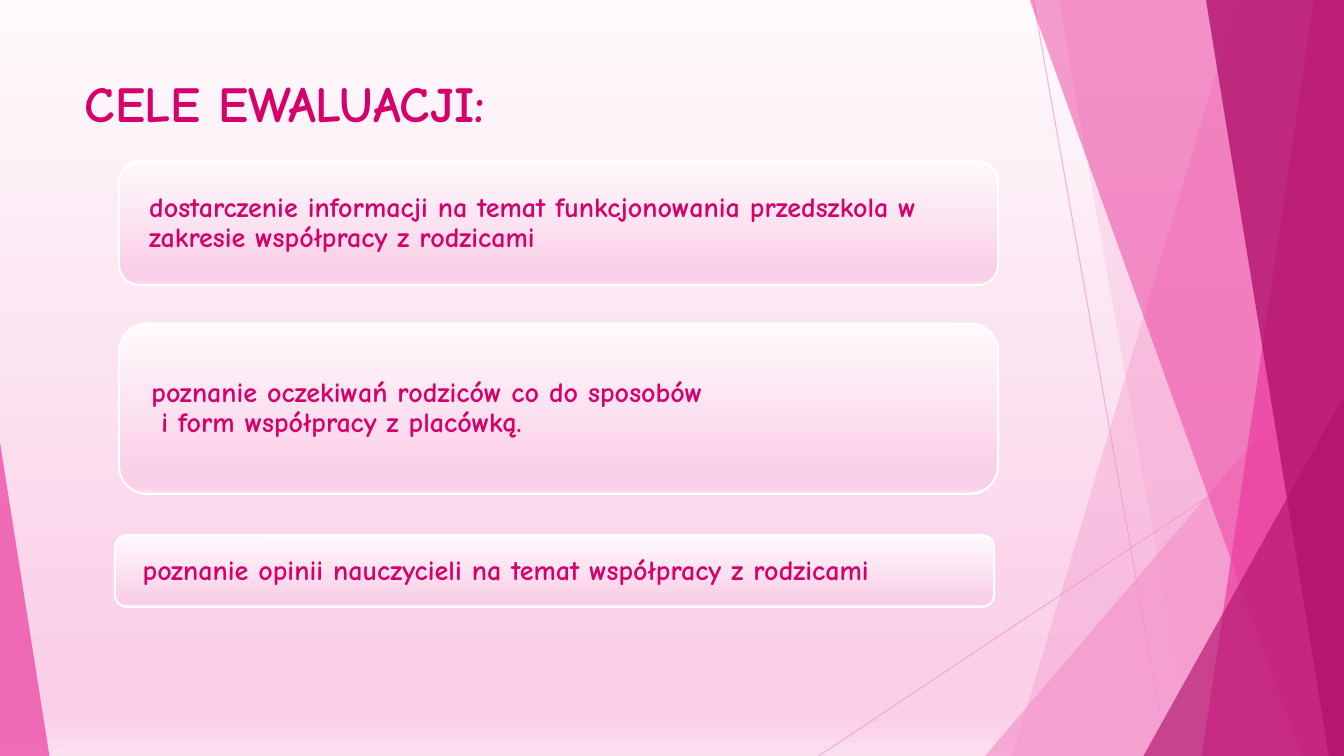
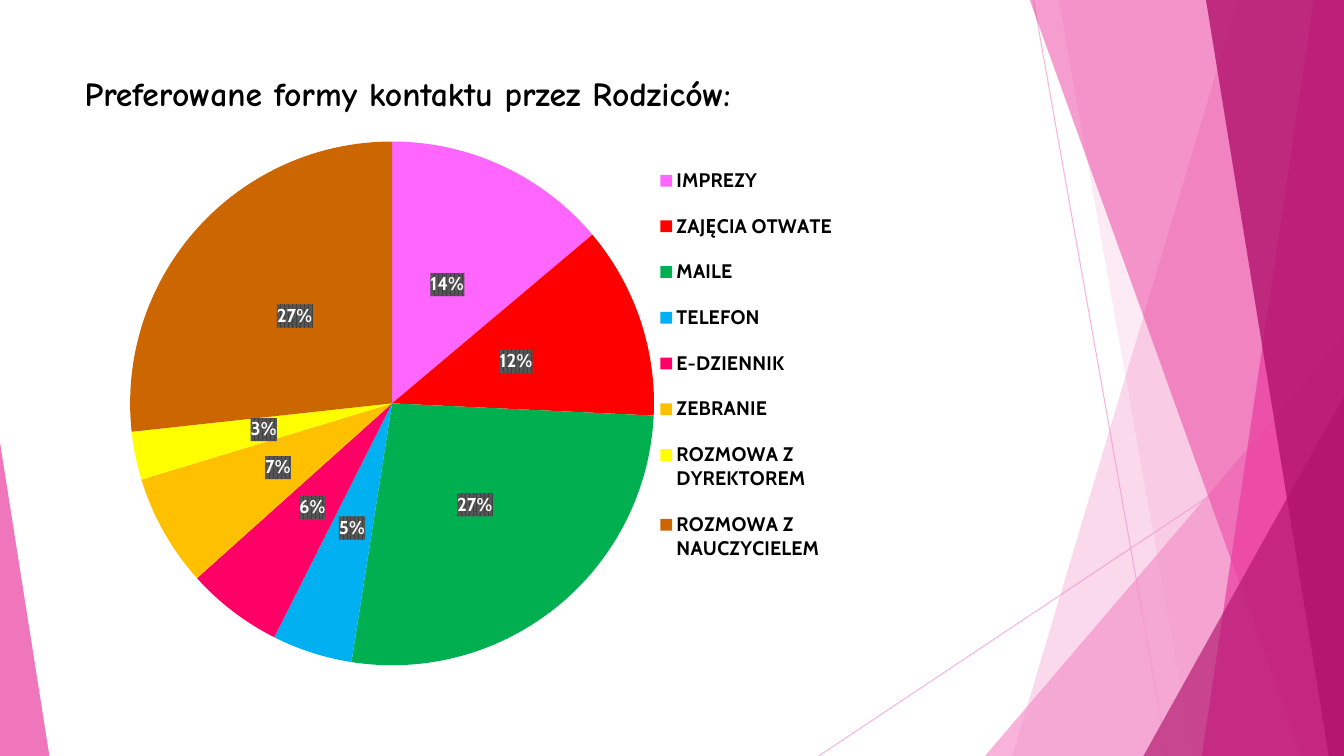
"""Build two slides on evaluation goals and preferred forms of contact."""
from lxml.etree import SubElement
from pptx import Presentation
from pptx.chart.data import CategoryChartData
from pptx.dml.color import RGBColor
from pptx.enum.chart import XL_CHART_TYPE as ChartType
from pptx.enum.chart import XL_LABEL_POSITION as LabelPosition
from pptx.enum.chart import XL_LEGEND_POSITION as LegendPosition
from pptx.enum.shapes import MSO_CONNECTOR as Connector
from pptx.enum.shapes import MSO_SHAPE as Shape
from pptx.enum.text import MSO_ANCHOR as Anchor
from pptx.enum.text import MSO_AUTO_SIZE as AutoSize
from pptx.enum.text import PP_ALIGN as Align
from pptx.oxml import parse_xml
from pptx.oxml.ns import nsdecls, qn
from pptx.util import Inches, Pt

LIGHT_PINK = RGBColor(0xF4, 0x96, 0xCB)
PINK = RGBColor(0xEB, 0x3D, 0x9F)
PURPLE = RGBColor(0xB2, 0x13, 0x6D)
MAGENTA = RGBColor(0xD6, 0x00, 0x6B)
WHITE = RGBColor(0xFF, 0xFF, 0xFF)
BLACK = RGBColor(0x00, 0x00, 0x00)
GRADIENT = [(0, "FEFAFC"), (88, "FAD0E8"), (95, "FAD0E8"), (100, "FCDFEF")]
TEXT_FONT = "Comic Neue"
CHART_FONT = "Cabin"
WIDTH, HEIGHT = Inches(13.33), Inches(7.5)


def set_opacity(shape, percent):
    color = shape.element.spPr.find(".//" + qn("a:srgbClr"))
    SubElement(color, qn("a:alpha"), val=str(percent * 1000))


def fill_gradient(fill, owner):
    fill.background()
    empty_fill = owner.find(".//" + qn("a:noFill"))
    stops = "".join(
        f'<a:gs pos="{position * 1000}"><a:srgbClr val="{color}"/></a:gs>'
        for position, color in GRADIENT
    )
    gradient = parse_xml(
        f'<a:gradFill {nsdecls("a")} rotWithShape="1"><a:gsLst>{stops}</a:gsLst>'
        '<a:lin ang="5400000" scaled="0"/></a:gradFill>'
    )
    empty_fill.getparent().replace(empty_fill, gradient)


presentation = Presentation()
presentation.slide_width = WIDTH
presentation.slide_height = HEIGHT
layout = presentation.slide_layouts[5]
for placeholder in list(layout.placeholders)[1:]:
    placeholder.element.getparent().remove(placeholder.element)

titles = [
    ("CELE EWALUACJI:", 36, MAGENTA, 0.81),
    ("Preferowane formy kontaktu przez Rodziców:", 24, BLACK, 0.57),
]
slides = []
for text, size, color, height in titles:
    slide = presentation.slides.add_slide(layout)
    title = slide.shapes.title
    title.left, title.top = Inches(0.74), Inches(0.67)
    title.width, title.height = Inches(9.4), Inches(height)
    title.text_frame.text = text
    title.text_frame.auto_size = AutoSize.NONE
    title.text_frame.vertical_anchor = Anchor.TOP
    paragraph = title.text_frame.paragraphs[0]
    paragraph.alignment = Align.LEFT
    paragraph.font.name = TEXT_FONT
    paragraph.font.size = Pt(size)
    paragraph.font.bold = True
    paragraph.font.color.rgb = color
    slides.append(slide)
goals_slide, contact_slide = slides

decorations = []
for ends in [(10.25, 0, 11.58, 7.5), (13.33, 4.03, 8.12, 7.5)]:
    line = goals_slide.shapes.add_connector(Connector.STRAIGHT, *map(Inches, ends))
    line.line.color.rgb = LIGHT_PINK
    line.line.width = Pt(0.75)
    set_opacity(line, 70)
    SubElement(line.element.spPr, qn("a:effectLst"))
    decorations.append(line)

bands_and_triangles = [
    ((12.28, 10.04), LIGHT_PINK, 36),
    ((10.5, 11.83), LIGHT_PINK, 20),
    ((9.77, 3.33, 3.56, 4.17, 1), LIGHT_PINK, 72),
    ((10.21, 12.91), PINK, 50),
    ((13.03, 11.92), PINK, 70),
    ((11.96, 13.18), PURPLE, 80),
    ((11.34, 3.93, 1.99, 3.57, 1), PURPLE, 66),
    ((0, 4.39, 0.49, 3.11, 0), PINK, 70),
]
band_top = Inches(-0.01)
for geometry, color, opacity in bands_and_triangles:
    if len(geometry) == 2:
        top_x, bottom_x = map(Inches, geometry)
        builder = goals_slide.shapes.build_freeform(top_x, band_top)
        builder.add_line_segments([(WIDTH, band_top), (WIDTH, HEIGHT), (bottom_x, HEIGHT)])
        shape = builder.convert_to_shape()
    else:
        *box, apex = geometry
        shape = goals_slide.shapes.add_shape(Shape.ISOSCELES_TRIANGLE, *map(Inches, box))
        shape.adjustments[0] = apex
    shape.shadow.inherit = False
    shape.fill.solid()
    shape.fill.fore_color.rgb = color
    set_opacity(shape, opacity)
    shape.line.fill.background()
    decorations.append(shape)

for index, decoration in enumerate(decorations, start=2):
    layout.shapes.element.insert(index, decoration.element)

fill_gradient(goals_slide.background.fill, goals_slide.element)
goals = [
    (1.18, 1.6, 1.23, "dostarczenie informacji na temat funkcjonowania przedszkola w zakresie współpracy z rodzicami"),
    (1.18, 3.21, 1.69, "poznanie oczekiwań rodziców co do sposobów\v i form współpracy z placówką."),
    (1.14, 5.31, 0.71, "poznanie opinii nauczycieli na temat współpracy z rodzicami"),
]
for left, top, height, text in goals:
    card = goals_slide.shapes.add_shape(
        Shape.ROUNDED_RECTANGLE, Inches(left), Inches(top), Inches(8.72), Inches(height)
    )
    card.shadow.inherit = False
    fill_gradient(card.fill, card.element.spPr)
    card.line.color.rgb = WHITE
    card.line.width = Pt(1.5)
    frame = card.text_frame
    frame.text = text
    frame.word_wrap = True
    frame.vertical_anchor = Anchor.MIDDLE
    frame.margin_left = frame.margin_right = Inches(0.24)
    frame.margin_top = frame.margin_bottom = 0
    paragraph = frame.paragraphs[0]
    paragraph.alignment = Align.LEFT
    paragraph.line_spacing = 0.9
    paragraph.font.name = TEXT_FONT
    paragraph.font.size = Pt(20)
    paragraph.font.bold = True
    paragraph.font.color.rgb = MAGENTA

contact_forms = [
    ("IMPREZY", 14, "FF66FF"),
    ("ZAJĘCIA OTWATE", 12, "FF0000"),
    ("MAILE", 27, "00B050"),
    ("TELEFON", 5, "00B0F0"),
    ("E-DZIENNIK", 6, "FF0066"),
    ("ZEBRANIE", 7, "FFC000"),
    ("ROZMOWA Z DYREKTOREM", 3, "FFFF00"),
    ("ROZMOWA Z NAUCZYCIELEM", 27, "CC6600"),
]
names, values, colors = zip(*contact_forms)
chart_data = CategoryChartData()
chart_data.categories = names
chart_data.add_series("Series 1", values)
chart = contact_slide.shapes.add_chart(
    ChartType.PIE, Inches(0.33), Inches(1.24), Inches(9.01), Inches(5.47), chart_data
).chart
chart.has_title = False
chart.font.name = CHART_FONT
chart.font.size = Pt(10)
chart.font.color.rgb = BLACK
plot = chart.plots[0]
plot.vary_by_categories = True
for index, color in enumerate(colors):
    point_fill = plot.series[0].points[index].format.fill
    point_fill.solid()
    point_fill.fore_color.rgb = RGBColor.from_string(color)

chart.has_legend = True
legend = chart.legend
legend.position = LegendPosition.RIGHT
legend.include_in_layout = False

plot.has_data_labels = True
labels = plot.data_labels
labels.show_percentage = True
labels.show_value = False
labels.number_format = "0%"
labels.number_format_is_linked = False
labels.position = LabelPosition.CENTER
for font, size, color in [(legend.font, 14, BLACK), (labels.font, 13.3, WHITE)]:
    font.name = CHART_FONT
    font.size = Pt(size)
    font.bold = True
    font.color.rgb = color

chart_space = chart.element
label_text = chart_space.find(".//" + qn("c:dLbls")).find(qn("c:txPr"))
label_text.addprevious(parse_xml(
    f'<c:spPr {nsdecls("c", "a")}><a:pattFill prst="pct75">'
    '<a:fgClr><a:srgbClr val="404040"/></a:fgClr>'
    '<a:bgClr><a:srgbClr val="595959"/></a:bgClr></a:pattFill></c:spPr>'
))

areas = [
    ("c:plotArea", 0, {"x": 0.1, "y": 0.03, "w": 0.59, "h": 0.95}),
    ("c:legend", 1, {"x": 0.68, "y": 0.04, "w": 0.21, "h": 0.79}),
]
for tag, index, box in areas:
    area = chart_space.find(".//" + qn(tag))
    for old_layout in area.findall(qn("c:layout")):
        area.remove(old_layout)
    target = '<c:layoutTarget val="inner"/>' if tag == "c:plotArea" else ""
    modes = "".join(f'<c:{axis}Mode val="edge"/>' for axis in "xy")
    sizes = "".join(f'<c:{side} val="{value}"/>' for side, value in box.items())
    area.insert(index, parse_xml(
        f'<c:layout {nsdecls("c")}><c:manualLayout>{target}{modes}{sizes}'
        '</c:manualLayout></c:layout>'
    ))

presentation.save("out.pptx")
